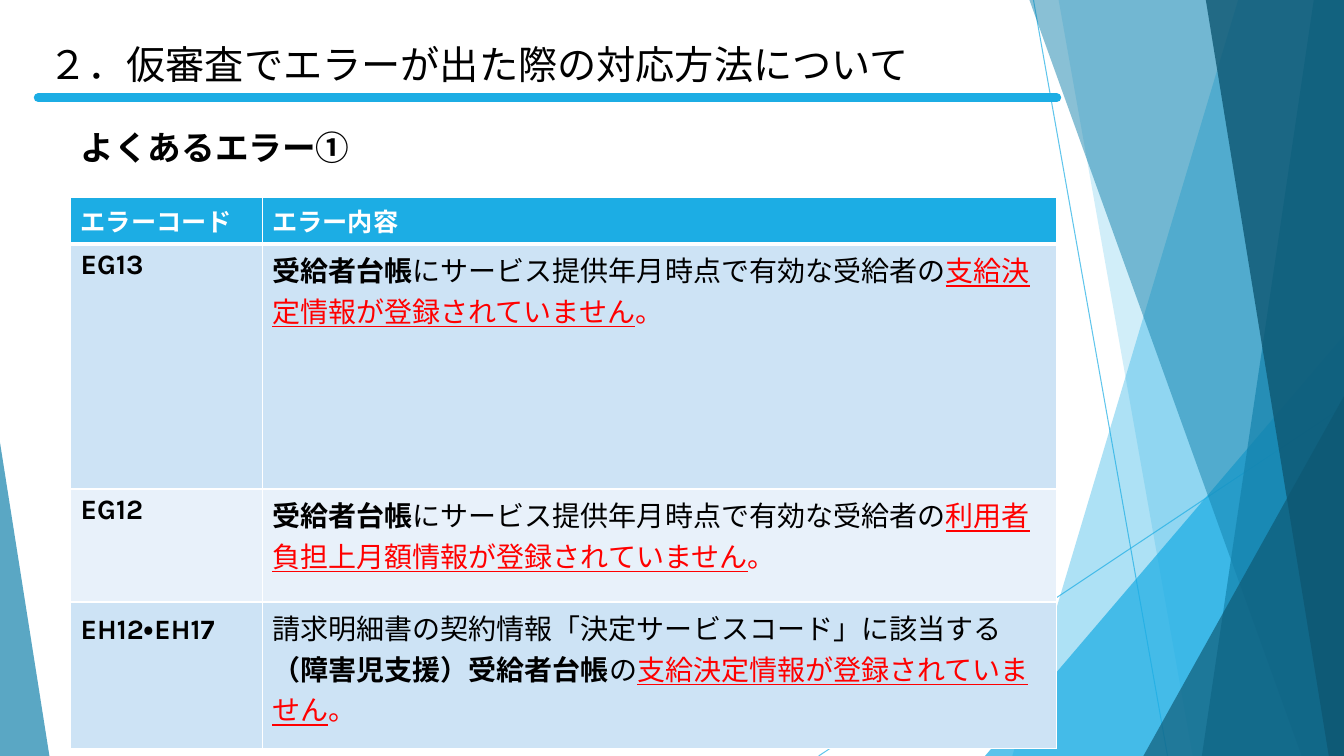
from dataclasses import dataclass
from lxml import etree
from pptx import Presentation
from pptx.dml.color import RGBColor as Rgb
from pptx.enum.lang import MSO_LANGUAGE_ID as Lang
from pptx.enum.shapes import MSO_CONNECTOR as Conn, MSO_SHAPE as Kind
from pptx.enum.text import MSO_ANCHOR as Anchor, MSO_AUTO_SIZE as Auto, PP_ALIGN as Align
from pptx.oxml.ns import qn
from pptx.util import Inches, Pt


@dataclass(frozen=True)
class Theme:
    sky: str = "1CADE4"
    teal: str = "1482AC"
    navy: str = "0E5772"
    band: str = "CDE3F5"
    pale: str = "E8F1FA"
    white: str = "FFFFFF"
    black: str = "000000"
    red: str = "FF0000"
    head: str = "Karla"
    body: str = "Arial"
    title: int = 28
    sub: int = 24
    label: int = 18
    cell: int = 20


T = Theme()
WIDE, HIGH = 13.33, 7.5


# Basic helpers
def put(par, text, size=T.cell, font=T.head, color=T.black, bold=False, under=False):
    run = par.add_run()
    run.text = text
    face = run.font
    face.size, face.name, face.bold, face.underline = Pt(size), font, bold, under
    face.color.rgb = Rgb.from_string(color)
    face.language_id = Lang.JAPANESE


def fade(node, alpha):
    for color in node.iter(qn("a:srgbClr")):
        etree.SubElement(color, qn("a:alpha")).set("val", str(alpha * 1000))


def paint(shape, color, alpha):
    shape.shadow.inherit = False
    shape.fill.solid()
    shape.fill.fore_color.rgb = Rgb.from_string(color)
    shape.line.fill.background()
    fade(shape._element.spPr, alpha)


def rule(slide, x1, y1, x2, y2, width):
    line = slide.shapes.add_connector(Conn.STRAIGHT, *map(Inches, (x1, y1, x2, y2)))
    line.line.color.rgb = Rgb.from_string(T.sky)
    line.line.width = Pt(width)
    etree.SubElement(line._element.spPr, qn("a:effectLst"))
    return line


def blade(slide, top, base, color, alpha):
    """Fill from a slanted left edge to the right side of the slide."""
    form = slide.shapes.build_freeform(Inches(top), 0)
    edge = [(WIDE, 0), (WIDE, HIGH), (base, HIGH)]
    form.add_line_segments([(Inches(x), Inches(y)) for x, y in edge])
    paint(form.convert_to_shape(), color, alpha)


def wedge(slide, left, top, width, apex, color, alpha):
    """Right triangle standing on the bottom of the slide."""
    box = map(Inches, (left, top, width, HIGH - top))
    shape = slide.shapes.add_shape(Kind.ISOSCELES_TRIANGLE, *box)
    shape.adjustments[0] = apex
    paint(shape, color, alpha)


# Faceted background
def facets(slide):
    for ends in ((10.25, 0, 11.58, HIGH), (WIDE, 4.03, 8.12, HIGH)):
        fade(rule(slide, *ends, 0.75)._element.spPr, 70)
    blade(slide, 12.28, 10.04, T.sky, 36)
    blade(slide, 10.5, 11.83, T.sky, 20)
    wedge(slide, 9.77, 3.33, 3.56, 1, T.sky, 72)
    blade(slide, 10.21, 12.91, T.teal, 50)
    blade(slide, 13.03, 11.92, T.teal, 70)
    blade(slide, 11.96, 13.18, T.navy, 80)
    wedge(slide, 11.34, 3.93, 1.99, 1, T.navy, 66)
    wedge(slide, 0, 4.39, 0.49, 0, T.teal, 70)


# Title and subtitle
def heading(holder, box, text, **style):
    holder.left, holder.top, holder.width, holder.height = map(Inches, box)
    frame = holder.text_frame
    frame.word_wrap, frame.auto_size = True, Auto.NONE
    frame.vertical_anchor = Anchor.TOP
    par = frame.paragraphs[0]
    props = par._p.get_or_add_pPr()
    props.set("marL", "0")
    props.set("indent", "0")
    etree.SubElement(props, qn("a:buNone"))
    par.alignment, par.space_before = Align.LEFT, Pt(0)
    put(par, text, **style)


def banner(slide, left, top, width):
    heading(slide.shapes.title, (left, top, width - 0.46, 0.57),
            "２．仮審査でエラーが出た際の対応方法について", size=T.title)
    line = rule(slide, left, top + 0.62, left + width, top + 0.62, 6.5)
    line.line._get_or_add_ln().set("cap", "rnd")
    heading(slide.placeholders[1], (left + 0.32, top + 0.86, 9.08, 0.5),
            "よくあるエラー①", size=T.sub, bold=True)


# Error table
def border(cell, **widths):
    props = cell._tc.get_or_add_tcPr()
    for side in "LRTB":
        line = etree.SubElement(props, qn("a:ln" + side), w=str(Pt(widths.get(side, 1))))
        fill = etree.SubElement(line, qn("a:solidFill"))
        etree.SubElement(fill, qn("a:srgbClr"), val=T.white)


def fill_cell(cell, color, parts, **widths):
    border(cell, **widths)
    cell.fill.solid()
    cell.fill.fore_color.rgb = Rgb.from_string(color)
    for text, style in parts:
        put(cell.text_frame.paragraphs[0], text, **style)


def errors(slide, left, top, cols, heights):
    plain = dict(font=T.body)
    strong = dict(font=T.body, bold=True)
    alert = dict(font=T.body, color=T.red, under=True)
    stop = ("。", dict(font=T.body, color=T.red))
    ledger = [("受給者台帳", strong),
              ("にサービス提供年月時点で有効な受給者の", plain)]
    rows = [
        ("EG13", ledger + [("支給決定情報が登録されていません", alert), stop]),
        ("EG12", ledger + [("利用者負担上月額情報が登録されていません", alert), stop]),
        ("EH12・EH17", [
            ("請求明細書の契約情報「決定サービスコード」に該当する", plain),
            ("（障害児支援）受給者台帳", strong), ("の", plain),
            ("支給決定情報が登録されていません", alert), stop]),
    ]
    size = map(Inches, (left, top, sum(cols), sum(heights)))
    table = slide.shapes.add_table(len(heights), len(cols), *size).table
    for col, width in zip(table.columns, cols):
        col.width = Inches(width)
    for row, height in zip(table.rows, heights):
        row.height = Inches(height)
    for col, text in enumerate(("エラーコード", "エラー内容")):
        style = dict(size=T.label, color=T.white, bold=True)
        fill_cell(table.cell(0, col), T.sky, [(text, style)], B=3)
    for num, (code, parts) in enumerate(rows, 1):
        color = T.band if num % 2 else T.pale
        upper = 3 if num == 1 else 1
        fill_cell(table.cell(num, 0), color, [(code, dict(bold=True))], T=upper)
        fill_cell(table.cell(num, 1), color, parts, T=upper)


def main():
    deck = Presentation()
    deck.slide_width, deck.slide_height = Inches(WIDE), Inches(HIGH)
    slide = deck.slides.add_slide(deck.slide_layouts[1])
    facets(slide)
    banner(slide, 0.38, 0.35, 10.1)
    errors(slide, 0.7, 1.96, (1.9, 7.88), (0.4, 2.43, 1.12, 1.45))
    deck.save("out.pptx")


if __name__ == "__main__":
    main()
